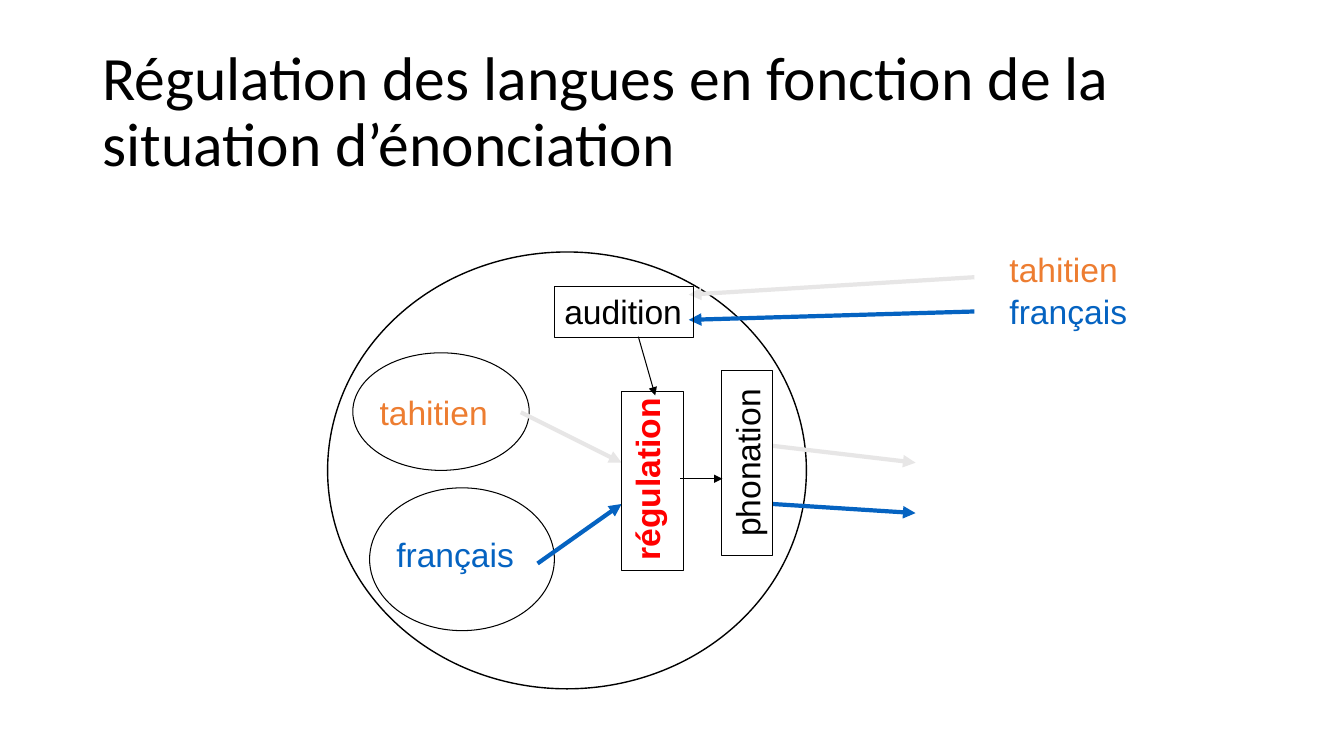
from lxml import etree
from pptx import Presentation
from pptx.dml.color import RGBColor
from pptx.enum import shapes, text
from pptx.oxml import ns
from pptx.util import Pt

BLACK = RGBColor(0x00, 0x00, 0x00)
RED = RGBColor(0xFF, 0x00, 0x00)
ORANGE = RGBColor(0xED, 0x7D, 0x31)
BLUE = RGBColor(0x05, 0x63, 0xC1)
GREY = RGBColor(0xE7, 0xE6, 0xE6)

TITLE = "Régulation des langues en fonction de la situation d’énonciation"
# (left, top, width, height), line width
ELLIPSES = [
    ((234, 180, 342, 312), 1),
    ((252, 252, 126, 84), 0.75),
    ((264, 348.5, 132, 102), 0.75),
]
# word, colour, (left, top, width, height)
LANGUAGES = [
    ("tahitien", ORANGE, (264, 276.5, 93, 36.5)),
    ("français", BLUE, (276, 378, 99.5, 36.5)),
    ("tahitien", ORANGE, (714, 174.5, 93, 36.5)),
    ("français", BLUE, (714, 204.5, 99.5, 36.5)),
]
# start, end, colour, line width
LANGUAGE_ARROWS = [
    ((384, 402.5), (444, 360), BLUE, 3),
    ((372, 294.5), (444, 330.5), GREY, 3),
    ((552, 318.5), (654, 330.5), GREY, 3),
    ((552, 360), (654, 366.5), BLUE, 3),
    ((696, 198), (492, 210.5), GREY, 3),
    ((696, 222.5), (492, 228.5), BLUE, 3),
]
PROCESS_ARROWS = [
    ((456, 240.5), (468, 282.5), BLACK, 0.75),
    ((486, 342), (516, 342), BLACK, 0.75),
]
AUDITION = (396, 204.5, 99.5, 36.5)
PHONATION = (467.5, 312.5, 132, 36.5)
REGULATION = (444, 279.5, 44, 128)


def add_run(p, words, size, color, font="Arial", bold=False):
    r = p.add_run()
    r.text = words
    r.font.name, r.font.size, r.font.bold = font, Pt(size), bold
    r.font.color.rgb = color


def add_outline(s, kind, box, width):
    sp = s.shapes.add_shape(kind, *map(Pt, box))
    sp.shadow.inherit = False
    sp.fill.background()
    sp.line.color.rgb = BLACK
    sp.line.width = Pt(width)
    return sp


def set_label(sp, words, color, bold=False, wrap=False,
              align=text.PP_ALIGN.LEFT, anchor=text.MSO_ANCHOR.TOP):
    tf = sp.text_frame
    tf.word_wrap = wrap
    tf.auto_size = text.MSO_AUTO_SIZE.SHAPE_TO_FIT_TEXT
    tf.vertical_anchor = anchor
    p = tf.paragraphs[0]
    p.alignment = align
    add_run(p, words, 24, color, bold=bold)
    return p


def add_arrow(s, start, end, color, width):
    line = s.shapes.add_connector(
        shapes.MSO_CONNECTOR.STRAIGHT, *map(Pt, start + end))
    line.line.color.rgb = color
    line.line.width = Pt(width)
    etree.SubElement(line.line._get_or_add_ln(), ns.qn("a:tailEnd"), type="triangle")
    etree.SubElement(line._element.spPr, ns.qn("a:effectLst"))


def add_title(s):
    tf = s.shapes.add_textbox(*map(Pt, (66, 29, 828, 104.5))).text_frame
    tf.word_wrap = True
    tf.vertical_anchor = text.MSO_ANCHOR.MIDDLE
    p = tf.paragraphs[0]
    p.line_spacing = 0.9
    add_run(p, TITLE, 44, BLACK, "Calibri")


def main():
    prs = Presentation()
    prs.slide_width, prs.slide_height = Pt(960), Pt(540)
    s = prs.slides.add_slide(prs.slide_layouts[6])
    add_title(s)

    for box, width in ELLIPSES:
        add_outline(s, shapes.MSO_SHAPE.OVAL, box, width)
    for word, color, box in LANGUAGES:
        set_label(s.shapes.add_textbox(*map(Pt, box)), word, color)
    for arrow in LANGUAGE_ARROWS:
        add_arrow(s, *arrow)

    rect = shapes.MSO_SHAPE.RECTANGLE
    set_label(add_outline(s, rect, AUDITION, 0.75), "audition", BLACK)

    phonation = add_outline(s, rect, PHONATION, 0.75)
    phonation.rotation = 270
    set_label(phonation, "phonation", BLACK, wrap=True,
              align=text.PP_ALIGN.CENTER, anchor=text.MSO_ANCHOR.MIDDLE)

    regulation = add_outline(s, rect, REGULATION, 0.75)
    regulation.rotation = 180
    p = set_label(regulation, "régulation", RED, bold=True)
    add_run(p, " ", 14, RED, bold=True)
    regulation.text_frame._txBody.bodyPr.set("vert", "eaVert")

    for arrow in PROCESS_ARROWS:
        add_arrow(s, *arrow)
    prs.save("out.pptx")


if __name__ == "__main__":
    main()
